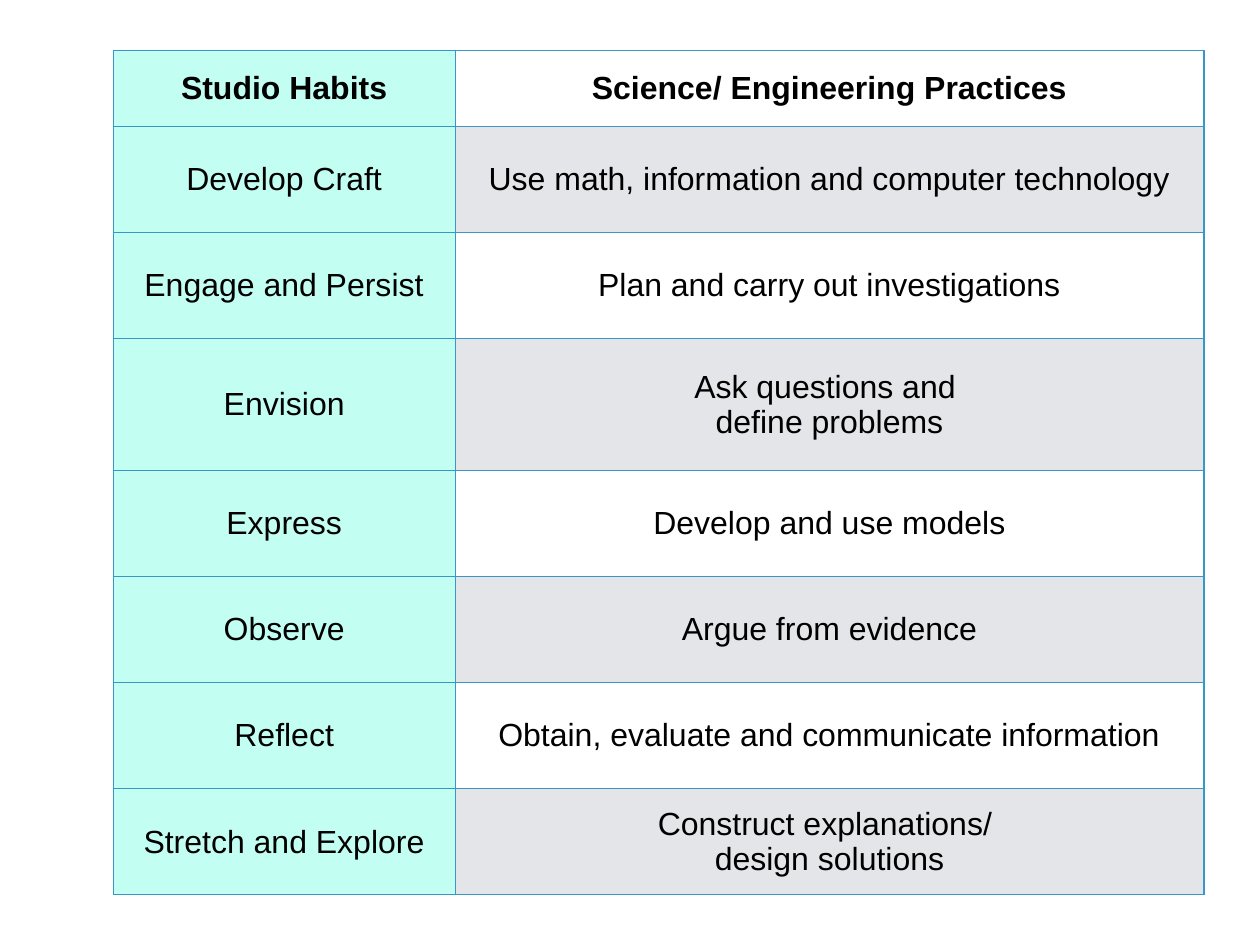
import pptx
import pptx.util
import pptx.dml.color
import pptx.enum.text
import pptx.oxml.ns
import lxml.etree

Pt = pptx.util.Pt

ROWS = [
    ("Studio Habits", "Science/ Engineering Practices"),
    ("Develop Craft", "Use math, information and computer technology"),
    ("Engage and Persist", "Plan and carry out investigations"),
    ("Envision", "Ask questions and \ndefine problems"),
    ("Express", "Develop and use models"),
    ("Observe", "Argue from evidence"),
    ("Reflect", "Obtain, evaluate and communicate information"),
    ("Stretch and Explore", "Construct explanations/ \ndesign solutions"),
]
LEFT, TOP = 92, 41
COL_WIDTHS = [278, 608.5]
HEADER_HEIGHT, ROW_HEIGHT, ENVISION_HEIGHT = 62, 86.2, 107.3
HABIT, PLAIN, BAND, BORDER = "C3FEF3", "FFFFFF", "E3E5E8", "3797C6"
FONT, SIZE, TEXT = "Arial", 26, "000000"
INSET = 4.5


def rgb(value):
    return pptx.dml.color.RGBColor.from_string(value)


def add_borders(cell):
    qn = pptx.oxml.ns.qn
    tcPr = cell._tc.get_or_add_tcPr()
    for side in ("a:lnL", "a:lnR", "a:lnT", "a:lnB"):
        ln = lxml.etree.SubElement(tcPr, qn(side), w=str(Pt(1)))
        fill = lxml.etree.SubElement(ln, qn("a:solidFill"))
        lxml.etree.SubElement(fill, qn("a:srgbClr"), val=BORDER)


def fill_cell(cell, text, color, bold):
    add_borders(cell)
    cell.fill.solid()
    cell.fill.fore_color.rgb = rgb(color)
    cell.margin_left = cell.margin_right = Pt(INSET)
    cell.margin_top = cell.margin_bottom = Pt(INSET)
    cell.vertical_anchor = pptx.enum.text.MSO_ANCHOR.MIDDLE
    cell.text_frame.text = text
    for p in cell.text_frame.paragraphs:
        p.alignment = pptx.enum.text.PP_ALIGN.CENTER
        for r in p.runs:
            r.font.name = FONT
            r.font.size = Pt(SIZE)
            r.font.bold = bold
            r.font.color.rgb = rgb(TEXT)


def row_height(i):
    if i == 0:
        return HEADER_HEIGHT
    return ENVISION_HEIGHT if ROWS[i][0] == "Envision" else ROW_HEIGHT


def main():
    prs = pptx.Presentation()
    prs.slide_width, prs.slide_height = Pt(1024), Pt(768)
    s = prs.slides.add_slide(prs.slide_layouts[6])
    heights = [row_height(i) for i in range(len(ROWS))]
    table = s.shapes.add_table(len(ROWS), len(COL_WIDTHS), Pt(LEFT), Pt(TOP),
                               Pt(sum(COL_WIDTHS)), Pt(sum(heights))).table
    for col, width in zip(table.columns, COL_WIDTHS):
        col.width = Pt(width)
    for i, (habit, practice) in enumerate(ROWS):
        table.rows[i].height = Pt(heights[i])
        fill_cell(table.cell(i, 0), habit, HABIT, i == 0)
        fill_cell(table.cell(i, 1), practice, BAND if i % 2 else PLAIN, i == 0)
    prs.save("out.pptx")


if __name__ == "__main__":
    main()
